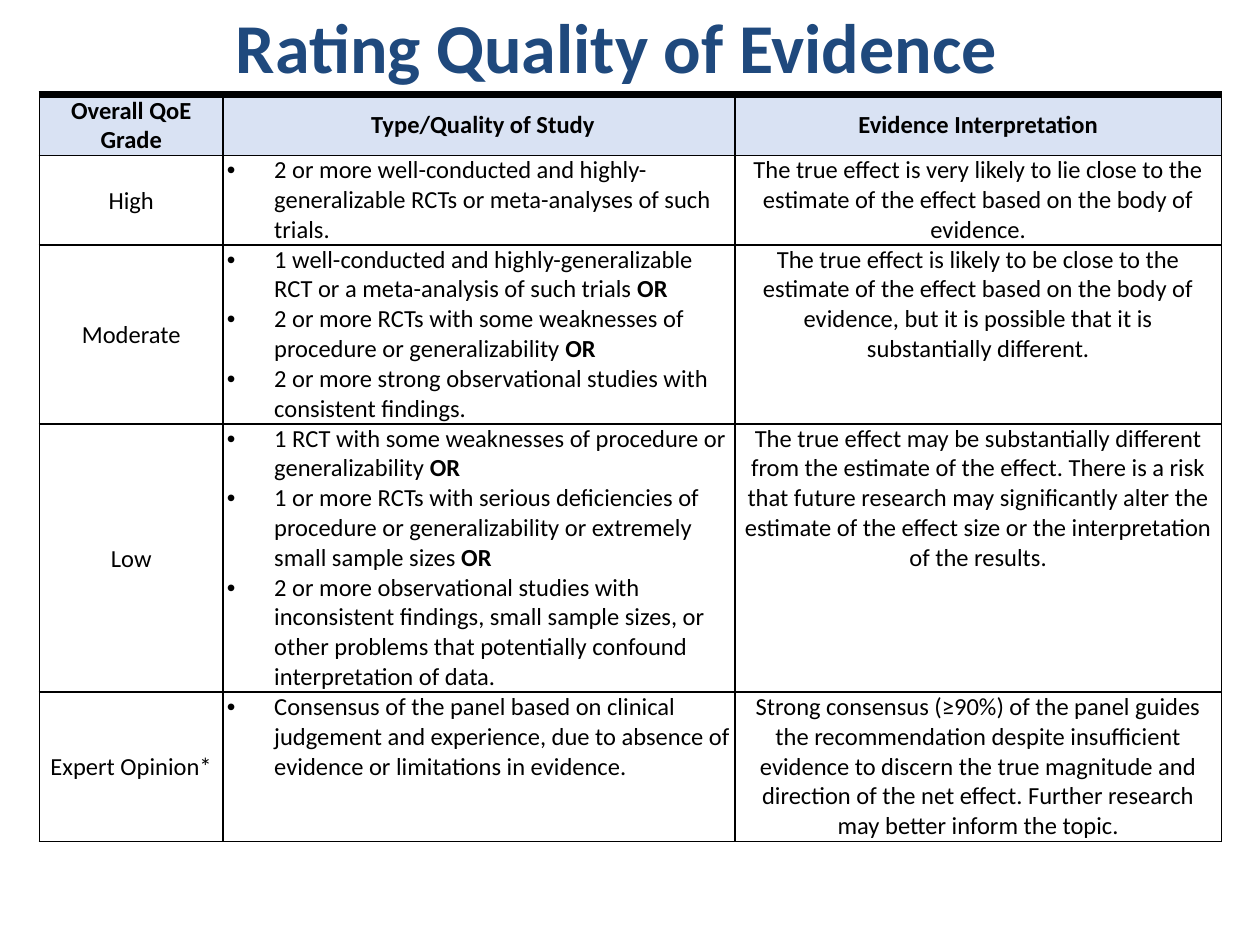
from lxml.etree import SubElement
from pptx import Presentation
from pptx.dml.color import RGBColor
from pptx.enum.text import MSO_ANCHOR as Anchor, PP_ALIGN as Align
from pptx.oxml.ns import qn
from pptx.util import Pt


def paint(target, colour):
    if hasattr(target, "solid"):
        target.solid()
        target.fore_color.rgb = RGBColor.from_string(colour)
    else:
        target.color.rgb = RGBColor.from_string(colour)


def add_run(paragraph, text, size, colour, bold):
    run = paragraph.add_run()
    run.text = text
    run.font.name = "Calibri"
    run.font.size = Pt(size)
    run.font.bold = bold
    paint(run.font, colour)


HEADINGS = ["Overall QoE Grade", "Type/Quality of Study", "Evidence Interpretation"]
GRADES = [
    ("High",
     ["2 or more well-conducted and highly-generalizable RCTs or meta-analyses of such trials."],
     "The true effect is very likely to lie close to the estimate of the effect based on "
     "the body of evidence."),
    ("Moderate",
     ["1 well-conducted and highly-generalizable RCT or a meta-analysis of such trials ",
      "2 or more RCTs with some weaknesses of procedure or generalizability ",
      "2 or more strong observational studies with consistent findings."],
     "The true effect is likely to be close to the estimate of the effect based on the body "
     "of evidence, but it is possible that it is substantially different."),
    ("Low",
     ["1 RCT with some weaknesses of procedure or generalizability ",
      "1 or more RCTs with serious deficiencies of procedure or generalizability or "
      "extremely small sample sizes ",
      "2 or more observational studies with inconsistent findings, small sample sizes, or "
      "other problems that potentially confound interpretation of data."],
     "The true effect may be substantially different from the estimate of the effect. There "
     "is a risk that future research may significantly alter the estimate of the effect size "
     "or the interpretation of the results."),
    ("Expert Opinion*",
     ["Consensus of the panel based on clinical judgement and experience, due to absence of "
      "evidence or limitations in evidence."],
     "Strong consensus (≥90%) of the panel guides the recommendation despite insufficient "
     "evidence to discern the true magnitude and direction of the net effect. Further "
     "research may better inform the topic."),
]
COLUMN_WIDTHS = [105, 292.5, 278]
LINES_PER_ROW = [2, 3, 6, 9, 5]
LINE_HEIGHT = 17

deck = Presentation()
deck.slide_width, deck.slide_height = Pt(720), Pt(540)
slide = deck.slides.add_slide(deck.slide_layouts[5])

title = slide.shapes.title
title.left, title.top, title.width, title.height = Pt(42), Pt(0), Pt(620.5), Pt(52.5)
title.text_frame.vertical_anchor = Anchor.MIDDLE
heading = title.text_frame.paragraphs[0]
heading.alignment = Align.CENTER
add_run(heading, "Rating Quality of Evidence", 40, "1F497D", True)

evidence = slide.shapes.add_table(
    len(LINES_PER_ROW), len(COLUMN_WIDTHS), Pt(22.5), Pt(54),
    Pt(sum(COLUMN_WIDTHS)), Pt(LINE_HEIGHT * sum(LINES_PER_ROW))).table
evidence.first_row = evidence.horz_banding = False
for column, width in zip(evidence.columns, COLUMN_WIDTHS):
    column.width = Pt(width)
for row, lines in zip(evidence.rows, LINES_PER_ROW):
    row.height = Pt(LINE_HEIGHT * lines)

for r, entries in enumerate([HEADINGS] + GRADES):
    for c, entry in enumerate(entries):
        cell = evidence.cell(r, c)
        is_header = r == 0
        is_list = isinstance(entry, list)
        cell.vertical_anchor = Anchor.MIDDLE if is_header or c == 0 else Anchor.TOP
        cell.margin_left = cell.margin_right = Pt(3.6 if c == 0 else 2.2)
        cell.margin_top = Pt(0.7 if c == 0 else 0)
        cell.margin_bottom = Pt(0)

        properties = cell._tc.get_or_add_tcPr()
        for side in ("lnL", "lnR", "lnT", "lnB"):
            weight = 4.5 if is_header and side == "lnT" else 1
            border = SubElement(properties, qn(f"a:{side}"), w=str(Pt(weight)))
            SubElement(SubElement(border, qn("a:solidFill")), qn("a:srgbClr"), val="000000")
        paint(cell.fill, "D9E2F3" if is_header else "FFFFFF")

        items = entry if is_list else [entry]
        for i, item in enumerate(items):
            paragraph = cell.text_frame.paragraphs[0] if i == 0 else cell.text_frame.add_paragraph()
            paragraph.alignment = Align.LEFT if is_list else Align.CENTER
            layout = paragraph._p.get_or_add_pPr()
            if is_list:
                layout.set("marL", str(Pt(27)))
                layout.set("indent", str(-Pt(27)))
                SubElement(layout, qn("a:buFont"), typeface="Arial")
                SubElement(layout, qn("a:buChar"), char="•")
            elif is_header and c == 1:
                layout.set("marL", str(Pt(4.5)))
            add_run(paragraph, item, 14, "000000", is_header)
            if is_list and i < len(items) - 1:
                add_run(paragraph, "OR", 14, "000000", True)

deck.save("out.pptx")
